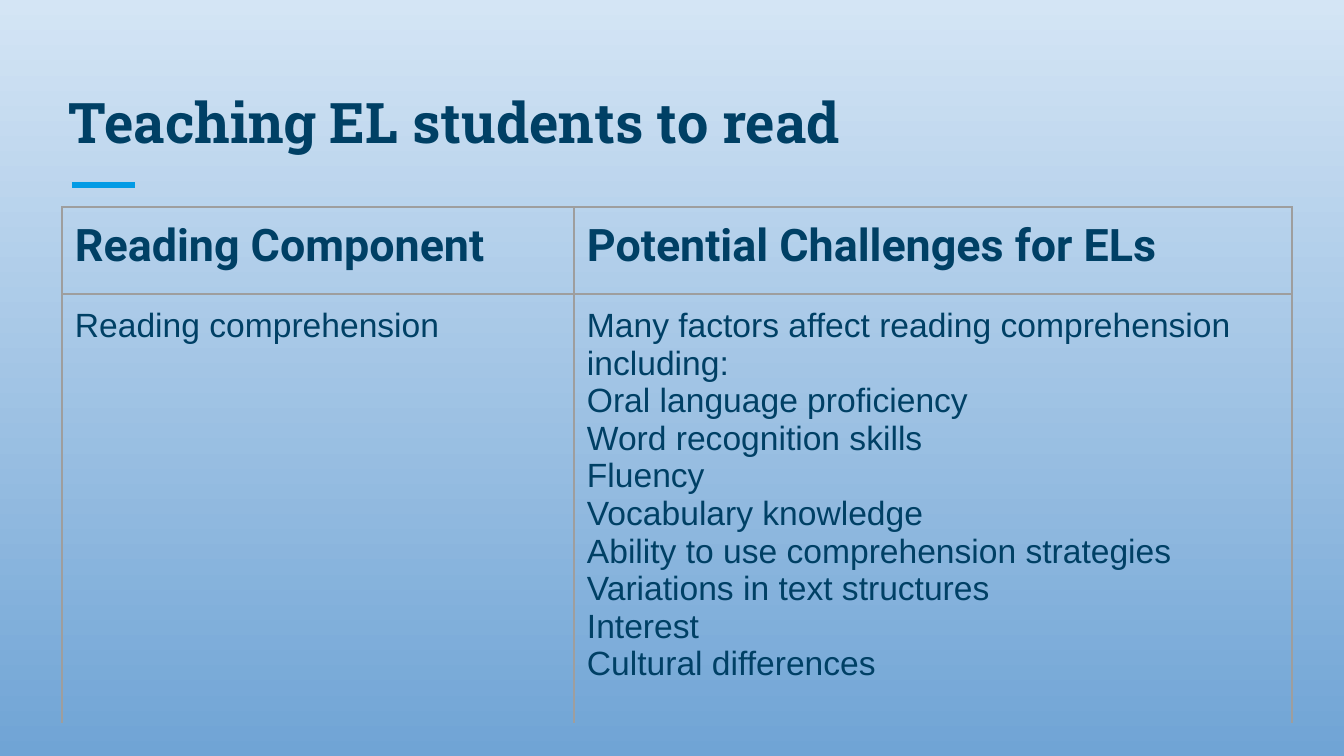
from dataclasses import dataclass

from lxml import etree
from pptx import Presentation
from pptx import util as u
from pptx.dml.color import RGBColor
from pptx.enum import shapes, text
from pptx.oxml import ns

EMU_PER_PX = 914400 / 134.4


@dataclass(frozen=True)
class Style:
    font: str
    size: int
    bold: bool


@dataclass(frozen=True)
class Theme:
    ink: str = "004065"
    accent: str = "039BE5"
    border: str = "9E9E9E"
    sky_top: str = "D4E5F5"
    sky_bottom: str = "70A4D5"
    accent_pt: float = 3
    border_pt: float = 0.75
    inset: int = 13
    title: Style = Style("Roboto Slab", 30, True)
    header: Style = Style("Roboto", 24, True)
    body: Style = Style("Arial", 18, False)


@dataclass(frozen=True)
class Row:
    height: int
    style: Style
    cells: tuple[tuple[str, ...], ...]


THEME = Theme()
COLUMN_WIDTHS = (512, 718)
ROWS = (
    Row(87, THEME.header, (("Reading Component",), ("Potential Challenges for ELs",))),
    Row(351, THEME.body, (
        ("Reading comprehension",),
        (
            "Many factors affect reading comprehension including:",
            "Oral language proficiency",
            "Word recognition skills",
            "Fluency",
            "Vocabulary knowledge",
            "Ability to use comprehension strategies",
            "Variations in text structures",
            "Interest",
            "Cultural differences",
        ),
    )),
)


def px(n: int) -> u.Emu:
    return u.Emu(round(n * EMU_PER_PX))


def rgb(value: str) -> RGBColor:
    return RGBColor.from_string(value)


def set_margins(box) -> None:
    box.margin_left = box.margin_right = px(THEME.inset)
    box.margin_top = box.margin_bottom = px(THEME.inset)


def write(tf, lines: tuple[str, ...], style: Style) -> None:
    tf.text = "\n".join(lines)
    for p in tf.paragraphs:
        p.font.name = style.font
        p.font.size = u.Pt(style.size)
        p.font.bold = style.bold
        p.font.color.rgb = rgb(THEME.ink)


def set_background(s) -> None:
    fill = s.background.fill
    fill.gradient()
    fill.gradient_angle = 270
    stops = ((0, THEME.sky_top), (1, THEME.sky_bottom))
    for stop, (position, color) in zip(fill.gradient_stops, stops):
        stop.position = position
        stop.color.rgb = rgb(color)


def add_title(s, title: str) -> None:
    sp = s.shapes.add_textbox(px(56), px(67), px(1230), px(101))
    tf = sp.text_frame
    tf.word_wrap = True
    tf.vertical_anchor = text.MSO_ANCHOR.BOTTOM
    set_margins(tf)
    write(tf, (title,), THEME.title)


def add_accent(s) -> None:
    line = s.shapes.add_connector(
        shapes.MSO_CONNECTOR.STRAIGHT, px(72), px(185), px(135), px(185))
    line.line.color.rgb = rgb(THEME.accent)
    line.line.width = u.Pt(THEME.accent_pt)
    etree.SubElement(line._element.spPr, ns.qn("a:effectLst"))


def add_borders(cell, open_bottom: bool) -> None:
    tc_pr = cell._tc.get_or_add_tcPr()
    for side in "LRTB":
        ln = etree.SubElement(
            tc_pr, ns.qn(f"a:ln{side}"), w=str(u.Pt(THEME.border_pt)))
        if side == "B" and open_bottom:
            etree.SubElement(ln, ns.qn("a:noFill"))
        else:
            fill = etree.SubElement(ln, ns.qn("a:solidFill"))
            etree.SubElement(fill, ns.qn("a:srgbClr"), val=THEME.border)


def add_challenges_table(s, rows: tuple[Row, ...]) -> None:
    table = s.shapes.add_table(
        len(rows), len(COLUMN_WIDTHS), px(62), px(207),
        px(sum(COLUMN_WIDTHS)), px(sum(row.height for row in rows))).table
    table.first_row = table.horz_banding = False
    for column, width in zip(table.columns, COLUMN_WIDTHS):
        column.width = px(width)
    for i, row in enumerate(rows):
        table.rows[i].height = px(row.height)
        for j, lines in enumerate(row.cells):
            cell = table.cell(i, j)
            set_margins(cell)
            write(cell.text_frame, lines, row.style)
            add_borders(cell, open_bottom=row is rows[-1])
            cell.fill.background()


def main() -> None:
    prs = Presentation()
    prs.slide_width, prs.slide_height = px(1344), px(756)
    s = prs.slides.add_slide(prs.slide_layouts[6])
    set_background(s)
    add_accent(s)
    add_title(s, "Teaching EL students to read")
    add_challenges_table(s, ROWS)
    prs.save("out.pptx")


if __name__ == "__main__":
    main()
